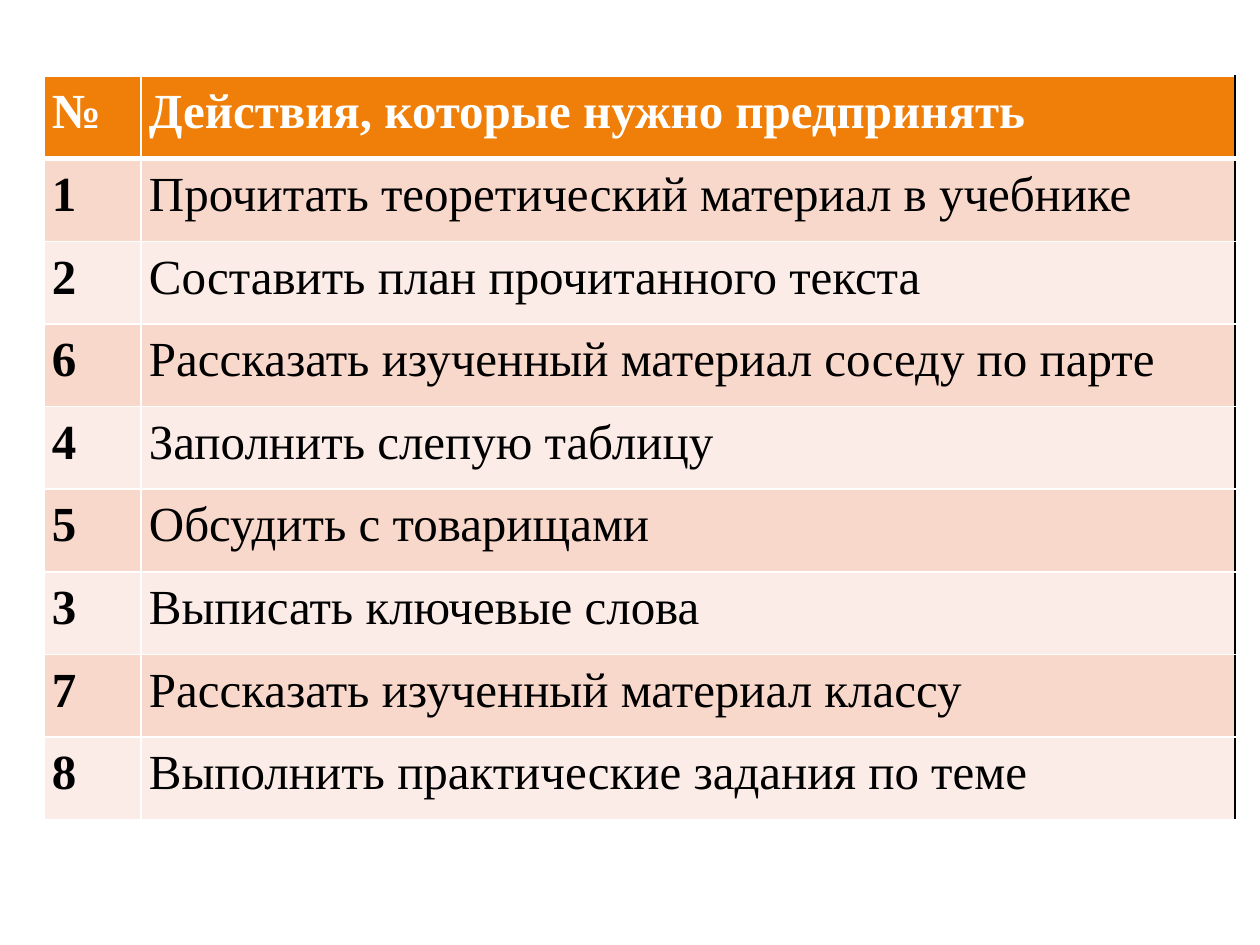
from lxml.etree import SubElement
from pptx import Presentation
from pptx.dml.color import RGBColor
from pptx.oxml.ns import qn
from pptx.util import Emu, Inches, Pt

PX = Inches(1) / 126
WHITE = RGBColor(0xFF, 0xFF, 0xFF)
BLACK = RGBColor(0x00, 0x00, 0x00)
ORANGE = RGBColor(0xF0, 0x7F, 0x09)
PEACH = RGBColor(0xF9, 0xD8, 0xCC)
PALE_PEACH = RGBColor(0xFC, 0xEC, 0xE7)

HEADER = ("№", "Действия, которые нужно предпринять")
ACTIONS = [
    ("1", "Прочитать теоретический материал в учебнике"),
    ("2", "Составить план прочитанного текста"),
    ("6", "Рассказать изученный материал соседу по парте"),
    ("4", "Заполнить слепую таблицу"),
    ("5", "Обсудить с товарищами"),
    ("3", "Выписать ключевые слова"),
    ("7", "Рассказать изученный материал классу"),
    ("8", "Выполнить практические задания по теме"),
]


def px(length):
    return Emu(round(length * PX))


class SlideBuilder:
    font_name = "Times New Roman"
    font_size = Pt(28)

    def __init__(self, slide):
        self.slide = slide

    def border(self, cell, side, color, width):
        properties = cell._tc.get_or_add_tcPr()
        line = SubElement(properties, qn(f"a:ln{side}"), w=str(Pt(width)))
        fill = SubElement(line, qn("a:solidFill"))
        SubElement(fill, qn("a:srgbClr"), val=str(color))

    def cell(self, cell, text, background, color, bold):
        cell.margin_left = cell.margin_right = px(8)
        cell.margin_top = px(1)
        cell.margin_bottom = px(0)
        cell.fill.solid()
        cell.fill.fore_color.rgb = background
        paragraph = cell.text_frame.paragraphs[0]
        paragraph.line_spacing = 1.15
        paragraph.space_after = Pt(10)
        run = paragraph.add_run()
        run.text = text
        run.font.name = self.font_name
        run.font.size = self.font_size
        run.font.bold = bold
        run.font.color.rgb = color

    def table(self, left, top, widths, height, rows):
        table = self.slide.shapes.add_table(
            len(rows), len(widths), px(left), px(top), px(sum(widths)), px(height)
        ).table
        for column, width in zip(table.columns, widths):
            column.width = px(width)
        for r, texts in enumerate(rows):
            is_header = r == 0
            background = ORANGE if is_header else (PALE_PEACH, PEACH)[r % 2]
            for c, text in enumerate(texts):
                cell = table.cell(r, c)
                is_last = c == len(widths) - 1
                self.border(cell, "L", WHITE, 1)
                self.border(cell, "R", BLACK if is_last else WHITE, 1)
                self.border(cell, "T", WHITE, 3 if r == 1 else 1)
                self.border(cell, "B", WHITE, 3 if is_header else 1)
                self.cell(cell, text, background,
                          WHITE if is_header else BLACK, is_header or c == 0)


def main():
    presentation = Presentation()
    presentation.slide_width = px(1260)
    presentation.slide_height = px(945)
    builder = SlideBuilder(presentation.slides.add_slide(presentation.slide_layouts[6]))
    builder.table(44, 76, (97, 1094), 744, [HEADER, *ACTIONS])
    presentation.save("out.pptx")


if __name__ == "__main__":
    main()
